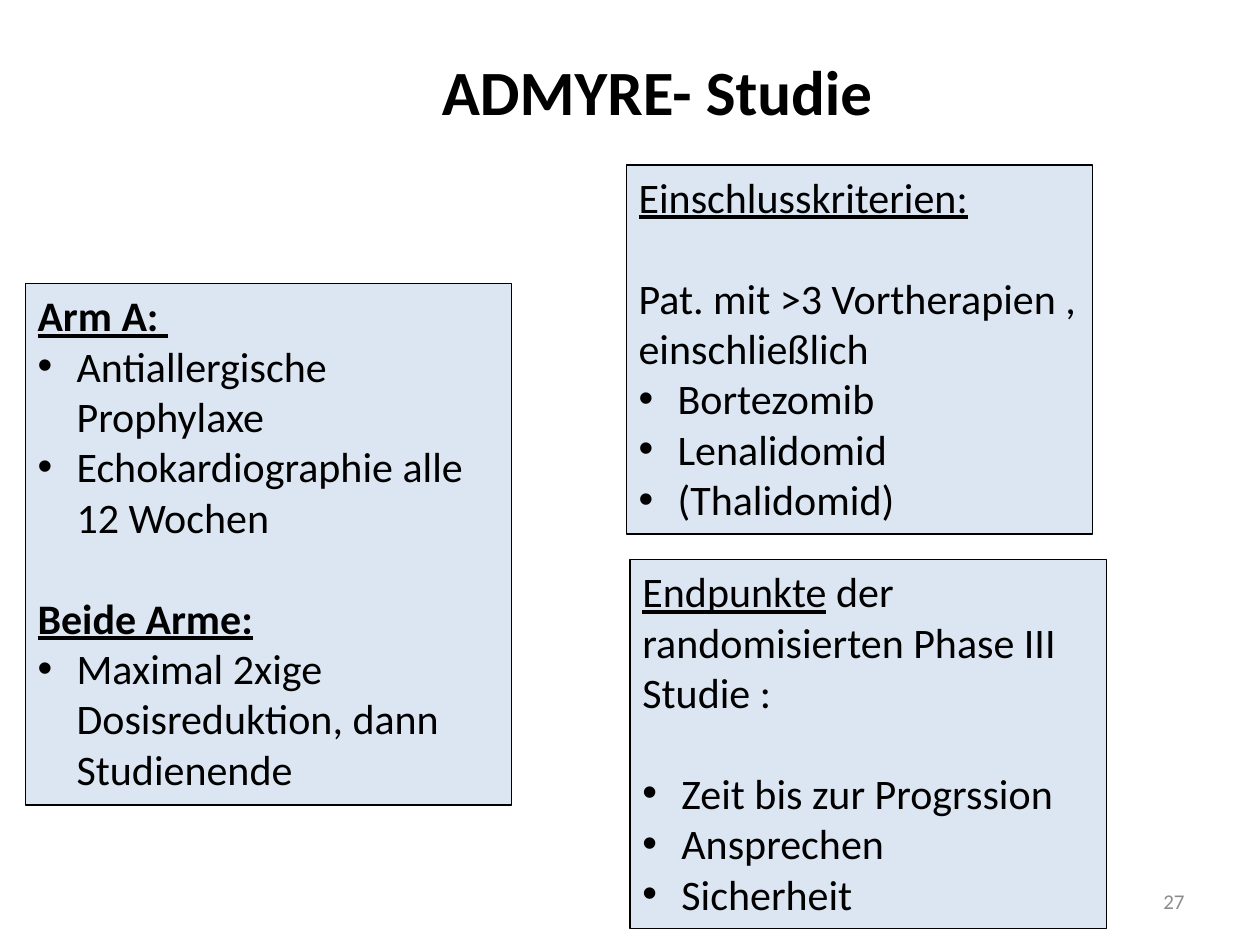
from lxml import etree
from pptx import Presentation
from pptx.dml.color import RGBColor
from pptx.enum.text import MSO_ANCHOR, MSO_AUTO_SIZE, PP_ALIGN
from pptx.oxml.ns import qn
from pptx.util import Inches, Pt

MIDDLE = MSO_ANCHOR.MIDDLE
CENTER, RIGHT = PP_ALIGN.CENTER, PP_ALIGN.RIGHT
GROW = MSO_AUTO_SIZE.SHAPE_TO_FIT_TEXT

FONT = "Calibri"
COLORS = {"text": "000000", "panel": "DCE6F2", "line": "000000",
          "number": "8C8C8C", "white": "FFFFFF"}
BODY_SIZE = 24
SECTION_GAP = 28.8  # one body line, in points
INDENT = 0.31

# Content: each paragraph is (kind, starts a section, runs); a run is (text, style)
TITLE = "ADMYRE- Studie"
SLIDE_NUMBER = "27"
PANELS = [
    ((0.2, 2.25, 3.86, 4.14), [
        ("text", False, [("Arm A: ", "bu")]),
        ("bullet", False, [("Antiallergische Prophylaxe", "")]),
        ("bullet", False, [("Echokardiographie alle 12 Wochen", "")]),
        ("text", True, [("Beide Arme:", "bu")]),
        ("bullet", False, [("Maximal 2xige Dosisreduktion, dann Studienende", "")]),
    ]),
    ((4.97, 1.31, 3.7, 2.93), [
        ("text", False, [("Einschlusskriterien:", "u")]),
        ("text", True, [("Pat. mit >3 Vortherapien , einschließlich", "")]),
        ("bullet", False, [("Bortezomib", "")]),
        ("bullet", False, [("Lenalidomid", "")]),
        ("bullet", False, [("(Thalidomid)", "")]),
    ]),
    ((5, 4.44, 3.78, 2.93), [
        ("text", False, [("Endpunkte", "u"),
                         (" der randomisierten Phase III Studie :", "")]),
        ("bullet", True, [("Zeit bis zur Progrssion", "")]),
        ("bullet", False, [("Ansprechen", "")]),
        ("bullet", False, [("Sicherheit", "")]),
    ]),
]


def color(name):
    return RGBColor.from_string(COLORS[name])


def add_run(paragraph, text, size, color_name="text", style=""):
    run = paragraph.add_run()
    run.text = text
    run.font.name = FONT
    run.font.size = Pt(size)
    run.font.color.rgb = color(color_name)
    run.font.bold = "b" in style
    run.font.underline = "u" in style


def add_bullet(paragraph):
    properties = paragraph._p.get_or_add_pPr()
    properties.set("marL", str(Inches(INDENT)))
    properties.set("indent", str(-Inches(INDENT)))
    etree.SubElement(properties, qn("a:buFont"), typeface="Arial")
    etree.SubElement(properties, qn("a:buChar"), char="•")


def add_panel(slide, box, paragraphs):
    panel = slide.shapes.add_textbox(*map(Inches, box))
    panel.fill.solid()
    panel.fill.fore_color.rgb = color("panel")
    panel.line.color.rgb = color("line")
    panel.line.width = Pt(0.75)
    frame = panel.text_frame
    frame.word_wrap = True
    frame.auto_size = GROW
    for index, (kind, new_section, runs) in enumerate(paragraphs):
        paragraph = frame.add_paragraph() if index else frame.paragraphs[0]
        if kind == "bullet":
            add_bullet(paragraph)
        if new_section:
            paragraph.space_before = Pt(SECTION_GAP)
        for text, style in runs:
            add_run(paragraph, text, BODY_SIZE, style=style)


def main():
    presentation = Presentation()
    presentation.slide_width, presentation.slide_height = Inches(10), Inches(7.5)
    slide = presentation.slides.add_slide(presentation.slide_layouts[5])

    # Title
    title = slide.shapes.title
    title.left, title.top, title.width, title.height = map(
        Inches, (2.44, 0.21, 5.55, 1.02))
    title.fill.solid()
    title.fill.fore_color.rgb = color("white")
    title.text_frame.vertical_anchor = MIDDLE
    heading = title.text_frame.paragraphs[0]
    heading.alignment = CENTER
    add_run(heading, TITLE, 36, style="b")

    # Text panels
    for box, paragraphs in PANELS:
        add_panel(slide, box, paragraphs)

    # Slide number
    number = slide.shapes.add_textbox(*map(Inches, (7.17, 6.95, 2.33, 0.4)))
    number.text_frame.word_wrap = True
    number.text_frame.vertical_anchor = MIDDLE
    paragraph = number.text_frame.paragraphs[0]
    paragraph.alignment = RIGHT
    add_run(paragraph, SLIDE_NUMBER, 12, "number")

    presentation.save("out.pptx")


if __name__ == "__main__":
    main()
